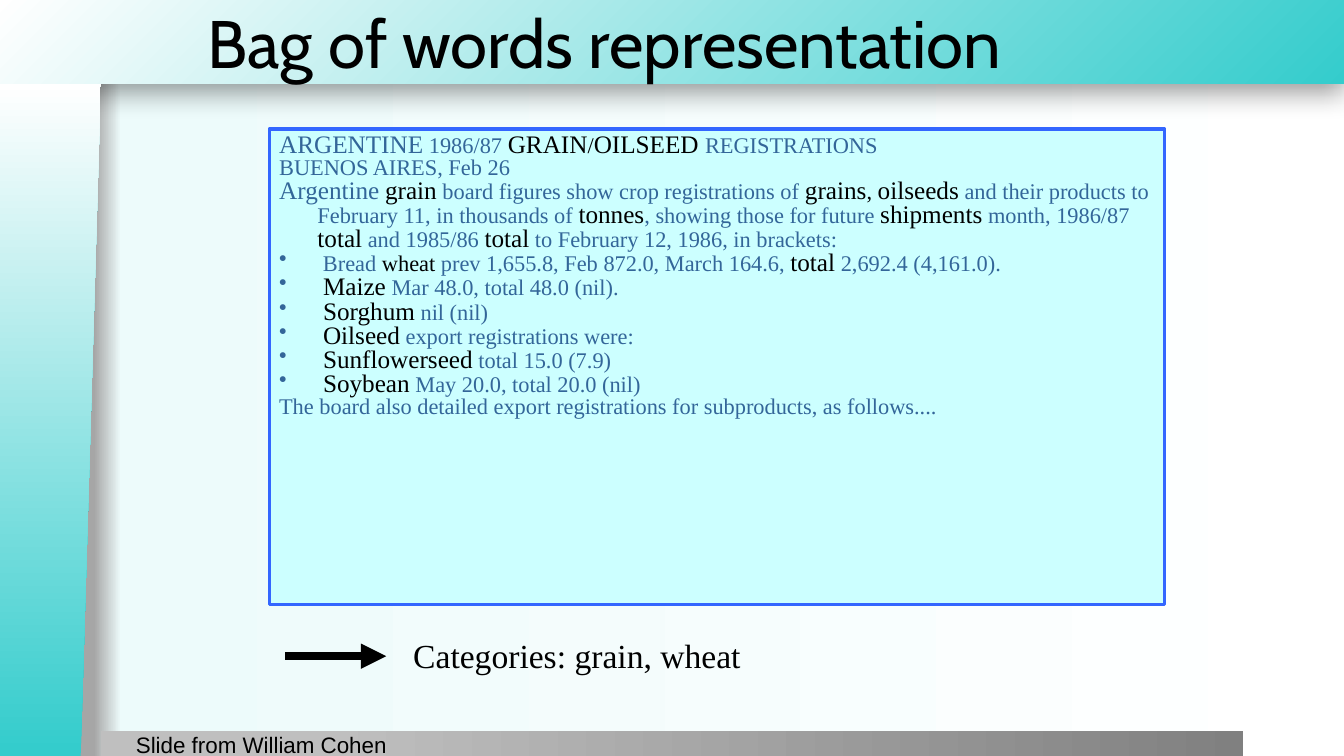
from lxml.etree import SubElement
from pptx import Presentation
from pptx.dml.color import RGBColor
from pptx.enum.shapes import MSO_CONNECTOR, MSO_SHAPE
from pptx.enum.text import MSO_ANCHOR, MSO_AUTO_SIZE, PP_ALIGN
from pptx.oxml.ns import qn
from pptx.util import Inches, Pt

COLORS = {"teal": "34CCCC", "white": "FFFFFF", "mist": "EDFBFB", "shade": "A6A6A6",
          "silver": "BFBFBF", "gray": "808080", "pale": "CCFFFF", "border": "3366FF",
          "blue": "336699", "black": "000000"}
SERIF = "Times New Roman"
STYLES = {"b": ("blue", 16), "B": ("blue", 18), "k": ("black", 16), "K": ("black", 18)}

HEADLINES = [
    [("B", "ARGENTINE"), ("b", " 1986/87 "), ("K", "GRAIN"), ("k", "/"), ("K", "OILSEED "),
     ("b", "REGISTRATIONS")],
    [("b", "BUENOS AIRES, Feb 26")],
    [("B", "Argentine"), ("k", " "), ("K", "grain"),
     ("b", " board figures show crop registrations of "), ("K", "grains"), ("k", ", "),
     ("K", "oilseeds"), ("b", " and their products to February 11, in thousands of "),
     ("K", "tonnes"), ("b", ", showing those for future "), ("K", "shipments"),
     ("b", " month, 1986/87 "), ("K", "total"), ("b", " and 1985/86 "), ("K", "total"),
     ("b", " to February 12, 1986, in brackets:")],
]
CROPS = [("Maize", " Mar 48.0, total 48.0 (nil)."), ("Sorghum", " nil (nil)"),
         ("Oilseed", " export registrations were:"), ("Sunflowerseed", " total 15.0 (7.9)"),
         ("Soybean", " May 20.0, total 20.0 (nil)")]
BULLETS = [
    [("b", " Bread "), ("k", "wheat "), ("b", "prev 1,655.8, Feb 872.0, March 164.6, "),
     ("K", "total"), ("b", " 2,692.4 (4,161.0).")],
] + [[("b", " "), ("K", crop), ("b", figures)] for crop, figures in CROPS]
CLOSING = [[("b", "The board also detailed export registrations for subproducts, as follows....")]]


def rgb(name):
    """Return the named colour."""
    return RGBColor.from_string(COLORS[name])


def add_text(p, text, size=16, font=SERIF, color="black"):
    """Append a formatted run to a paragraph."""
    r = p.add_run()
    r.text = text
    r.font.size, r.font.name = Pt(size), font
    r.font.color.rgb = rgb(color)


def set_gradient(fill, element, stops, radial=False):
    """Give a fill the listed colour stops, left to right or from the bottom right."""
    fill.gradient()
    if not radial:
        fill.gradient_angle = 0
    grad = element.find(".//" + qn("a:gradFill"))
    grad.set("rotWithShape", "1")
    gs_list = grad.find(qn("a:gsLst"))
    for gs in list(gs_list):
        gs_list.remove(gs)
    for pos, color in stops:
        gs = SubElement(gs_list, qn("a:gs"), pos=str(pos * 1000))
        SubElement(gs, qn("a:srgbClr"), val=COLORS[color])
    if radial:
        grad.remove(grad.find(qn("a:lin")))
        circle = SubElement(grad, qn("a:path"), path="circle")
        SubElement(circle, qn("a:fillToRect"), l="100000", t="100000")


def add_box(s, kind, box):
    """Add a flat preset shape without an outline."""
    sp = s.shapes.add_shape(kind, *map(Inches, box))
    sp.shadow.inherit = False
    sp.line.fill.background()
    return sp


def add_label(s, box, text, **fmt):
    """Add a one-line text box."""
    tf = s.shapes.add_textbox(*map(Inches, box)).text_frame
    tf.word_wrap = True
    add_text(tf.paragraphs[0], text, **fmt)


def add_backdrop(s, width, height, band):
    """Paint the background, top band, bottom bar and side panel."""
    set_gradient(s.background.fill, s.element, [(7, "shade"), (9, "mist"), (100, "white")])
    top = add_box(s, MSO_SHAPE.RECTANGLE, (0, 0, width, band))
    set_gradient(top.fill, top.element, [(0, "teal"), (100, "white")], radial=True)
    effects = top.element.spPr.find(qn("a:effectLst"))
    shadow = SubElement(effects, qn("a:outerShdw"), blurRad=str(Pt(20)), dist=str(Pt(6)),
                        dir="5400000", algn="t", rotWithShape="0")
    tint = SubElement(shadow, qn("a:srgbClr"), val=COLORS["black"])
    SubElement(tint, qn("a:alpha"), val="40000")

    bar = add_box(s, MSO_SHAPE.RECTANGLE, (1, height - 0.25, width - 2, 0.25))
    set_gradient(bar.fill, bar.element, [(20, "silver"), (100, "gray")])

    length = height - band
    side = add_box(s, MSO_SHAPE.FLOWCHART_MANUAL_INPUT,
                   (0.5 - length / 2, band + length / 2 - 0.5, length, 1))
    side.rotation = 270
    side.element.spPr.find(qn("a:xfrm")).set("flipV", "1")
    set_gradient(side.fill, side.element, [(1, "teal"), (100, "white")])


def add_title(s, box, text):
    """Place the title placeholder in front of the top band."""
    sp = s.shapes.title
    sp.left, sp.top, sp.width, sp.height = map(Inches, box)
    sp.element.getparent().append(sp.element)
    tf = sp.text_frame
    tf.vertical_anchor, tf.auto_size = MSO_ANCHOR.MIDDLE, MSO_AUTO_SIZE.NONE
    p = tf.paragraphs[0]
    p.alignment = PP_ALIGN.LEFT
    add_text(p, text, size=48, font="Cabin")


def add_article(s, box):
    """Add the framed news story with its keywords picked out in black."""
    sp = add_box(s, MSO_SHAPE.RECTANGLE, box)
    sp.fill.solid()
    sp.fill.fore_color.rgb = rgb("pale")
    sp.line.color.rgb = rgb("border")
    sp.line.width = Pt(2.25)
    tf = sp.text_frame
    tf.word_wrap, tf.vertical_anchor = True, MSO_ANCHOR.TOP
    for i, runs in enumerate(HEADLINES + BULLETS + CLOSING):
        p = tf.add_paragraph() if i else tf.paragraphs[0]
        p.alignment, p.line_spacing = PP_ALIGN.LEFT, 0.8
        pPr = p._p.get_or_add_pPr()
        pPr.set("marL", str(Inches(0.38)))
        pPr.set("indent", str(-Inches(0.38)))
        if runs in BULLETS:
            SubElement(pPr, qn("a:buChar"), char="•")
        else:
            SubElement(pPr, qn("a:buNone"))
        for style, text in runs:
            color, size = STYLES[style]
            add_text(p, text, size=size, color=color)


def add_categories(s, left, top):
    """Add the arrow and the resulting categories."""
    y = Inches(top + 0.26)
    arrow = s.shapes.add_connector(MSO_CONNECTOR.STRAIGHT, Inches(left), y, Inches(left + 1), y)
    arrow.line.color.rgb = rgb("black")
    arrow.line.width = Pt(6)
    SubElement(arrow.line._get_or_add_ln(), qn("a:tailEnd"), type="triangle")
    SubElement(arrow.element.spPr, qn("a:effectLst"))
    add_label(s, (left + 1.17, top, 5.08, 0.5), "Categories: grain, wheat", size=24)


def main():
    """Build and save the slide."""
    prs = Presentation()
    width, height, band = 13.33, 7.5, 0.83
    prs.slide_width, prs.slide_height = Inches(width), Inches(height)
    s = prs.slides.add_slide(prs.slide_layouts[5])
    add_backdrop(s, width, height, band)
    add_title(s, (1.96, 0, width - 1.96, band), "Bag of words representation")
    add_label(s, (1.25, 7.2, 2.83, 0.33), "Slide from William Cohen", font="Arial")
    add_article(s, (2.67, 1.28, 8.88, 4.72))
    add_categories(s, 2.83, 6.25)
    prs.save("out.pptx")


if __name__ == "__main__":
    main()
